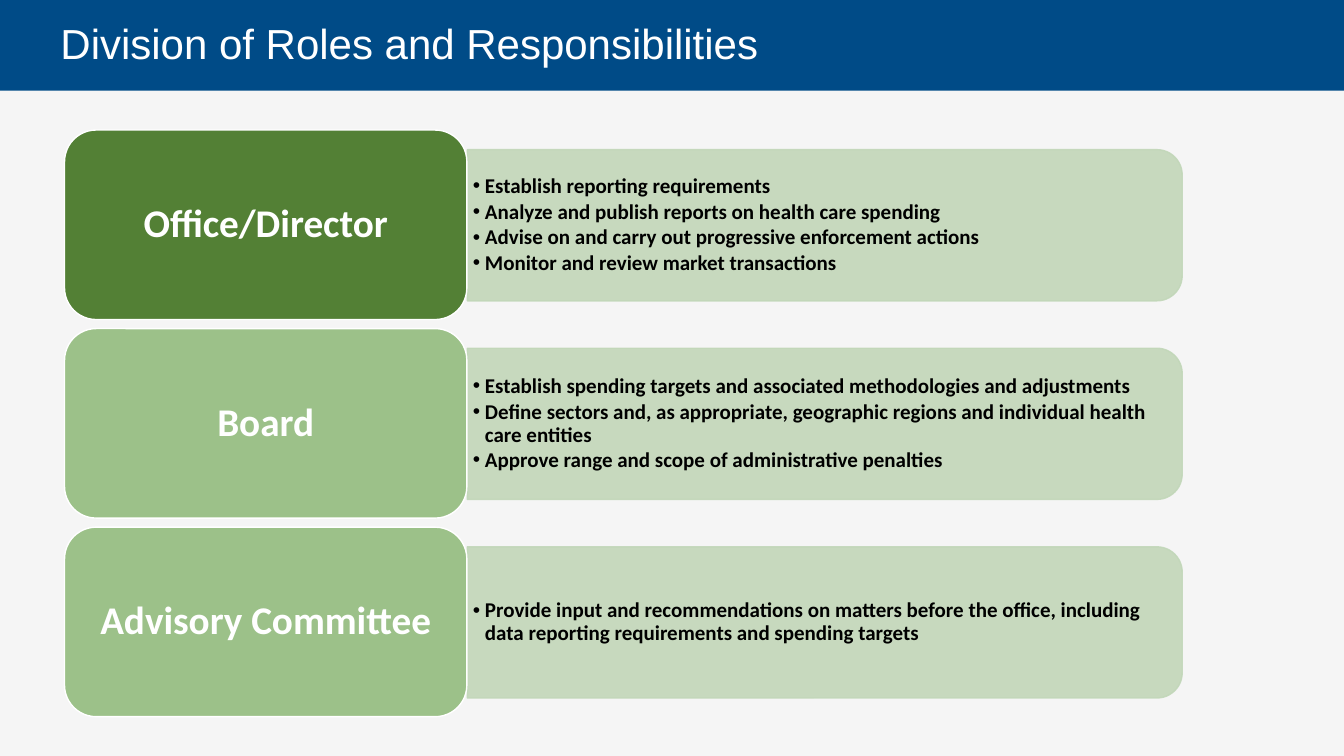
from lxml.etree import SubElement
from pptx import Presentation
from pptx.dml.color import RGBColor
from pptx.enum.shapes import MSO_SHAPE as Shape
from pptx.enum.text import MSO_ANCHOR as Anchor, PP_ALIGN as Align
from pptx.oxml.ns import qn
from pptx.util import Emu, Pt

PX = 9144
ROLES = [
    ("Office/Director", "538035", [
        "Establish reporting requirements",
        "Analyze and publish reports on health care spending",
        "Advise on and carry out progressive enforcement actions",
        "Monitor and review market transactions"]),
    ("Board", "9CC189", [
        "Establish spending targets and associated methodologies and adjustments",
        "Define sectors and, as appropriate, geographic regions and individual health care entities",
        "Approve range and scope of administrative penalties"]),
    ("Advisory Committee", "9CC189", [
        "Provide input and recommendations on matters before the office, "
        "including data reporting requirements and spending targets"]),
]
TITLE = {"name": "Arial", "size": Pt(30)}
LABEL = {"name": "Calibri", "size": Pt(28), "bold": True}
DUTY = {"name": "Calibri", "size": Pt(15), "bold": True}


def px(*values):
    return [Emu(v * PX) for v in values]


def rgb(value):
    return RGBColor.from_string(value)


class Deck:
    """Hold the presentation style and the current slide."""

    def __init__(self, width, height):
        """Open a presentation with one blank slide."""
        self.prs = Presentation()
        self.prs.slide_width, self.prs.slide_height = px(width, height)
        self.s = self.prs.slides.add_slide(self.prs.slide_layouts[6])

    def shape(self, kind, box, fill, line=None, alpha=None, rotation=0):
        """Add a filled preset shape with an optional outline."""
        sp = self.s.shapes.add_shape(kind, *px(*box))
        sp.shadow.inherit = False
        sp.rotation = rotation
        sp.fill.solid()
        sp.fill.fore_color.rgb = rgb(fill)
        if line:
            sp.line.color.rgb = rgb(line)
            sp.line.width = Pt(1)
        else:
            sp.line.fill.background()
        if alpha:
            for color in sp.element.spPr.iter(qn("a:srgbClr")):
                SubElement(color, qn("a:alpha"), val=str(alpha * 1000))
        return sp

    def put_text(self, sp, lines, style, color, insets, after=0, align=Align.LEFT, bullet=False):
        """Fill a shape with paragraphs of one style."""
        tf = sp.text_frame
        tf.word_wrap = True
        tf.vertical_anchor = Anchor.MIDDLE
        sides = ("margin_left", "margin_top", "margin_right", "margin_bottom")
        for side, inset in zip(sides, px(*insets)):
            setattr(tf, side, inset)
        layout = {"alignment": align, "line_spacing": 0.9, "space_after": Pt(after)}
        for i, line in enumerate(lines):
            p = tf.add_paragraph() if i else tf.paragraphs[0]
            for key, value in layout.items():
                setattr(p, key, value)
            if bullet:
                pPr = p._p.get_or_add_pPr()
                pPr.set("marL", str(12 * PX))
                pPr.set("indent", str(-12 * PX))
                SubElement(pPr, qn("a:buFont"), typeface="Arial")
                SubElement(pPr, qn("a:buChar"), char="•")
            r = p.add_run()
            r.text = line
            for key, value in style.items():
                setattr(r.font, key, value)
            r.font.color.rgb = rgb(color)

    def text(self, box, lines, style, color, insets, **options):
        """Add a text box."""
        sp = self.s.shapes.add_textbox(*px(*box))
        self.put_text(sp, lines, style, color, insets, **options)

    def role(self, top, name, fill, duties):
        """Add a role label with its panel of duties."""
        self.shape(Shape.ROUND_2_SAME_RECTANGLE, (743, top - 260, 150, 709),
                   "C2D7B9", "C2D7B9", alpha=90, rotation=90)
        self.text((463, top + 27, 702, 135), duties, DUTY, "000000", (6, 3, 6, 3),
                  after=2.25, bullet=True)
        label = self.shape(Shape.ROUNDED_RECTANGLE, (64, top, 399, 188), fill, "FFFFFF")
        self.put_text(label, [name], LABEL, "FFFFFF", (12, 6, 12, 6),
                      after=9.8, align=Align.CENTER)


def main():
    deck = Deck(1333, 750)
    deck.shape(Shape.RECTANGLE, (0, 68, 1333, 682), "F5F5F5")
    deck.shape(Shape.RECTANGLE, (0, 0, 1333, 90), "004B87")
    deck.text((0, 2, 1333, 88), ["Division of Roles and Responsibilities"],
              TITLE, "FFFFFF", (60, 10, 10, 10))
    for i, role in enumerate(ROLES):
        deck.role(129 + 197 * i, *role)
    deck.prs.save("out.pptx")


if __name__ == "__main__":
    main()
